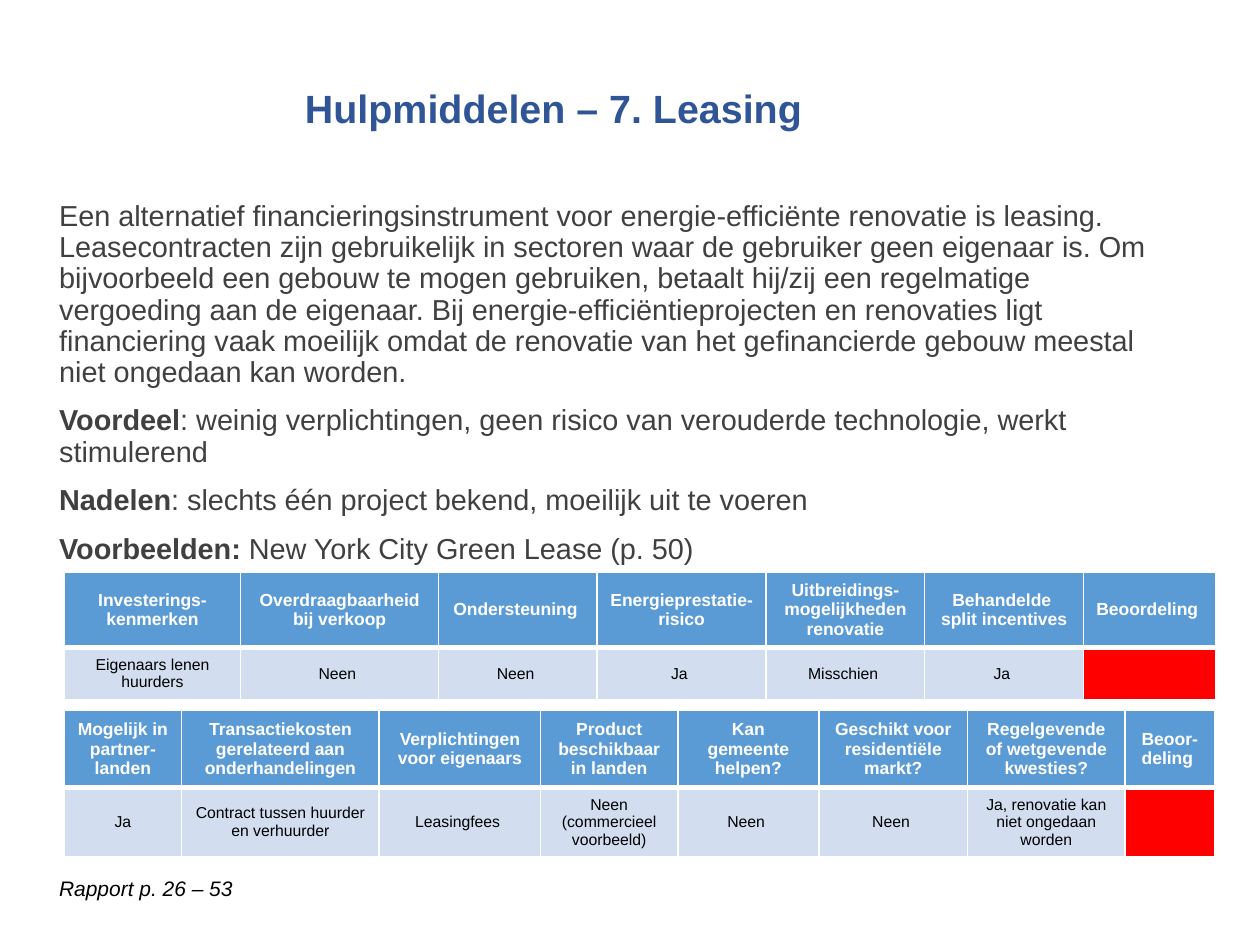
"""Build the slide on leasing as a financing instrument, with two assessment tables."""
from lxml import etree
from pptx import Presentation, util as u
from pptx.dml.color import RGBColor
from pptx.enum import text
from pptx.oxml import ns

WHITE = RGBColor(0xFF, 0xFF, 0xFF)
BLACK = RGBColor(0, 0, 0)
NAVY = RGBColor(0x2F, 0x55, 0x97)
GREY = RGBColor(0x40, 0x40, 0x40)
BLUE = RGBColor(0x5B, 0x9B, 0xD5)
PALE_BLUE = RGBColor(0xD2, 0xDE, 0xEF)
RED = RGBColor(0xFF, 0, 0)

TITLE = "Hulpmiddelen – 7. Leasing"
BODY = [
    ("", "Een alternatief financieringsinstrument voor energie-efficiënte renovatie is leasing. "
         "Leasecontracten zijn gebruikelijk in sectoren waar de gebruiker geen eigenaar is. "
         "Om bijvoorbeeld een gebouw te mogen gebruiken, betaalt hij/zij een regelmatige "
         "vergoeding aan de eigenaar. Bij energie-efficiëntieprojecten en renovaties ligt "
         "financiering vaak moeilijk omdat de renovatie van het gefinancierde gebouw meestal "
         "niet ongedaan kan worden."),
    ("Voordeel", ": weinig verplichtingen, geen risico van verouderde technologie, werkt stimulerend"),
    ("Nadelen", ": slechts één project bekend, moeilijk uit te voeren"),
    ("Voorbeelden:", " New York City Green Lease (p. 50)"),
]
REFERENCE = "Rapport p. 26 – 53"
TABLES = [
    {"top": 4.54, "heights": (0.6, 0.41),
     "columns": [
         (1.4, "Investerings-kenmerken", "Eigenaars lenen huurders"),
         (1.57, "Overdraagbaarheid bij verkoop", "Neen "),
         (1.26, "Ondersteuning ", "Neen "),
         (1.34, "Energieprestatie-risico", "Ja "),
         (1.26, "Uitbreidings-mogelijkheden renovatie", "Misschien "),
         (1.26, "Behandelde \nsplit incentives", "Ja "),
         (1.05, "Beoordeling ", ""),
     ]},
    {"top": 5.64, "heights": (0.61, 0.54),
     "columns": [
         (0.93, "Mogelijk in partner-landen", "Ja"),
         (1.57, "Transactiekosten gerelateerd aan onderhandelingen", "Contract tussen huurder en verhuurder"),
         (1.28, "Verplichtingen voor eigenaars", "Leasingfees "),
         (1.09, "Product beschikbaar in landen", "Neen (commercieel voorbeeld)"),
         (1.12, "Kan gemeente helpen?", "Neen "),
         (1.18, "Geschikt voor residentiële markt?", "Neen "),
         (1.25, "Regelgevende of wetgevende kwesties?", "Ja, renovatie kan niet ongedaan worden"),
         (0.71, "Beoor-deling ", ""),
     ]},
]
TABLE_LEFT = 0.51
HEADER_FONT = {"size": u.Pt(10), "bold": True, "color": WHITE}
ANSWER_FONT = {"size": u.Pt(9), "bold": False, "color": BLACK}
HEADER_BORDERS = {"lnL": 1, "lnR": 1, "lnT": 1, "lnB": 3}
ANSWER_BORDERS = {"lnL": 1, "lnR": 1, "lnT": 3, "lnB": 1}


def set_font(font, color, **values):
    font.name = "Arial"
    font.color.rgb = color
    for name, value in values.items():
        setattr(font, name, value)


def place(shape, left, top, width, height):
    for name, value in {"left": left, "top": top, "width": width, "height": height}.items():
        setattr(shape, name, u.Inches(value))


def set_borders(cell, borders):
    properties = cell._tc.get_or_add_tcPr()
    for side, points in borders.items():
        line = etree.SubElement(properties, ns.qn(f"a:{side}"), w=str(u.Pt(points)))
        fill = etree.SubElement(line, ns.qn("a:solidFill"))
        etree.SubElement(fill, ns.qn("a:srgbClr"), val=str(WHITE))


def fill_cell(cell, wording, color, font, borders):
    set_borders(cell, borders)
    cell.fill.solid()
    cell.fill.fore_color.rgb = color
    cell.vertical_anchor = text.MSO_ANCHOR.MIDDLE
    cell.text = wording
    for paragraph in cell.text_frame.paragraphs:
        paragraph.alignment = text.PP_ALIGN.CENTER
        set_font(paragraph.font, **font)


def add_title(slide):
    title = slide.shapes.title
    place(title, 2.32, 0.6, 6.28, 0.56)
    frame = title.text_frame
    frame.text = TITLE
    frame.auto_size = text.MSO_AUTO_SIZE.NONE
    frame.vertical_anchor = text.MSO_ANCHOR.MIDDLE
    paragraph = frame.paragraphs[0]
    paragraph.alignment = text.PP_ALIGN.LEFT
    paragraph.line_spacing = 0.9
    set_font(paragraph.font, NAVY, size=u.Pt(22.5), bold=True)


def add_body(slide):
    body = slide.placeholders[1]
    place(body, 0.37, 1.55, 8.94, 4.3)
    frame = body.text_frame
    frame.auto_size = text.MSO_AUTO_SIZE.NONE
    for index, (label, wording) in enumerate(BODY):
        paragraph = frame.add_paragraph() if index else frame.paragraphs[0]
        properties = paragraph._p.get_or_add_pPr()
        properties.set("marL", "0")
        properties.set("indent", "0")
        etree.SubElement(properties, ns.qn("a:buNone"))
        paragraph.line_spacing = 0.9
        paragraph.space_before = u.Pt(10 if index else 0)
        for part, bold in ((label, True), (wording, False)):
            if part:
                run = paragraph.add_run()
                run.text = part
                set_font(run.font, GREY, size=u.Pt(16.5), bold=bold)


def add_reference(slide):
    box = slide.shapes.add_textbox(*map(u.Inches, (0.37, 6.9, 2.32, 0.3)))
    box.text_frame.word_wrap = True
    box.text_frame.text = REFERENCE
    set_font(box.text_frame.paragraphs[0].font, BLACK, size=u.Pt(12), italic=True)


def add_assessment(slide, top, heights, columns):
    width = sum(column[0] for column in columns)
    frame = slide.shapes.add_table(
        2, len(columns), *map(u.Inches, (TABLE_LEFT, top, width, sum(heights))))
    table = frame.table
    for row, height in zip(table.rows, heights):
        row.height = u.Inches(height)
    for index, (column_width, header, answer) in enumerate(columns):
        table.columns[index].width = u.Inches(column_width)
        fill_cell(table.cell(0, index), header, BLUE, HEADER_FONT, HEADER_BORDERS)
        fill_cell(table.cell(1, index), answer, PALE_BLUE if answer else RED,
                  ANSWER_FONT, ANSWER_BORDERS)


def main():
    presentation = Presentation()
    presentation.slide_width = u.Inches(10)
    presentation.slide_height = u.Inches(7.5)
    slide = presentation.slides.add_slide(presentation.slide_layouts[1])
    add_body(slide)
    add_title(slide)
    add_reference(slide)
    for table in TABLES:
        add_assessment(slide, **table)
    presentation.save("out.pptx")


if __name__ == "__main__":
    main()
